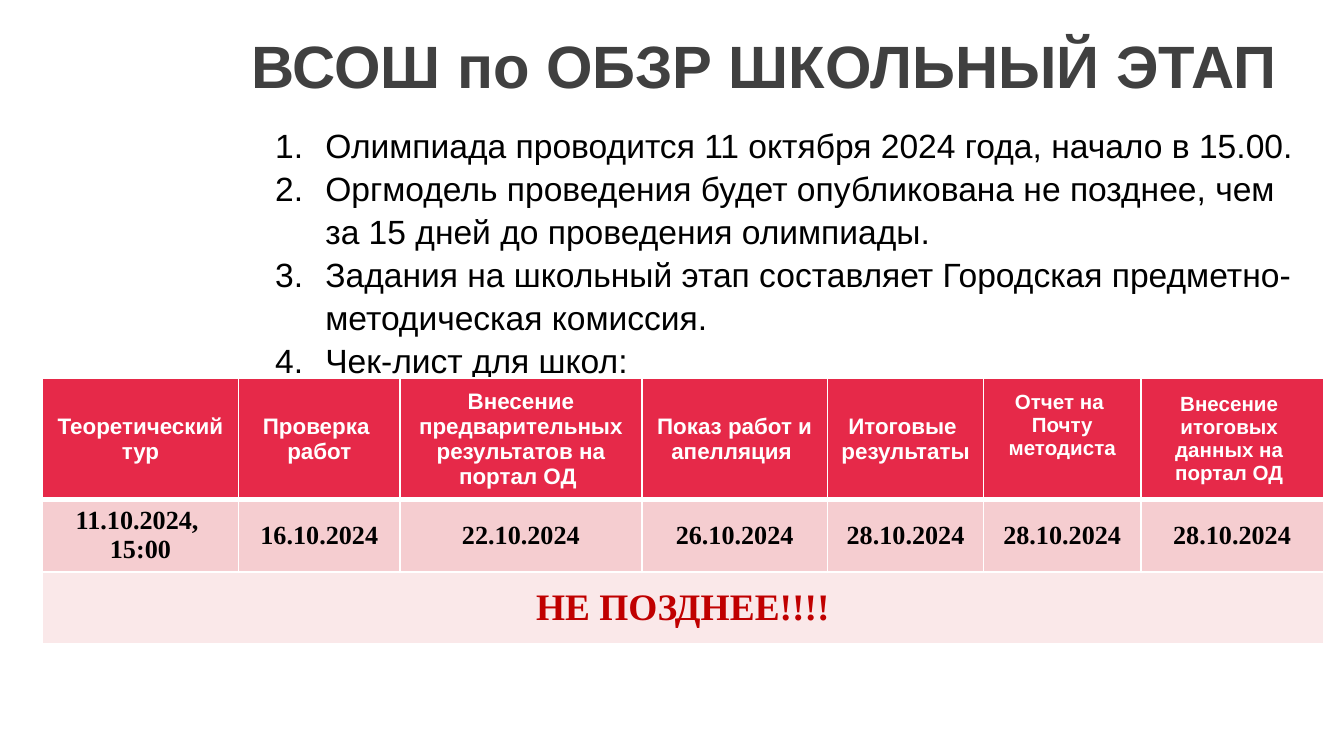
"""Build the slide on the school stage of the olympiad: title, rules, checklist table."""
from lxml.etree import SubElement
from pptx import Presentation
from pptx.dml.color import RGBColor
from pptx.enum.text import MSO_ANCHOR, MSO_AUTO_SIZE, PP_ALIGN
from pptx.oxml.ns import qn
from pptx.util import Cm, Pt

TITLE = "ВСОШ по ОБЗР ШКОЛЬНЫЙ ЭТАП"
RULES = [
    "Олимпиада проводится 11 октября 2024 года, начало в 15.00.",
    "Оргмодель проведения будет опубликована не позднее, чем за 15 дней до проведения олимпиады.",
    "Задания на школьный этап составляет Городская предметно-методическая комиссия.",
    "Чек-лист для школ:",
]
STEPS = [
    (3.71, 12, ["Теоретический ", "тур"], ["11.10.2024, ", "15:00"]),
    (3.05, 12, ["Проверка ", "работ"], ["16.10.2024"]),
    (4.57, 12, ["Внесение предварительных результатов на портал ОД "], ["22.10.2024"]),
    (3.51, 12, ["Показ работ и апелляция "], ["26.10.2024"]),
    (2.95, 12, ["Итоговые ", "результаты"], ["28.10.2024"]),
    (2.97, 11, ["Отчет на ", "Почту", "методиста"], ["28.10.2024"]),
    (3.45, 11, ["Внесение ", "итоговых ", "данных на ", "портал ОД "], ["28.10.2024"]),
]
REPORT = 5
NOTE = ["НЕ ПОЗДНЕЕ!!!!"]
ROWS = [2.25, 1.37, 1.37]

SANS, SERIF = "Arial", "Times New Roman"
WHITE = RGBColor(0xFF, 0xFF, 0xFF)
BLACK = RGBColor(0, 0, 0)
GREY = RGBColor(0x40, 0x40, 0x40)
RED = RGBColor(0xE6, 0x29, 0x49)
ROSE = RGBColor(0xF5, 0xCD, 0xD0)
PALE = RGBColor(0xFA, 0xE8, 0xE9)
DARK = RGBColor(0xC0, 0, 0)


def write(frame, lines, size, face, color, bold=True, align=PP_ALIGN.CENTER):
    for i, line in enumerate(lines):
        para = frame.paragraphs[0] if i == 0 else frame.add_paragraph()
        para.alignment = align
        run = para.add_run()
        run.text = line
        font = run.font
        font.size, font.name, font.bold = Pt(size), face, bold
        font.color.rgb = color


def edge(cell, base):
    props = cell._tc.get_or_add_tcPr()
    for side, width in zip("LRTB", (1, 1, 1, base)):
        line = SubElement(props, qn(f"a:ln{side}"), w=str(Pt(width)))
        fill = SubElement(line, qn("a:solidFill"))
        SubElement(fill, qn("a:srgbClr"), val=str(WHITE))


def paint(cell, fill, lines, size, face, color, base=1):
    edge(cell, base)
    cell.fill.solid()
    cell.fill.fore_color.rgb = fill
    cell.vertical_anchor = MSO_ANCHOR.MIDDLE
    if face == SERIF:
        cell.margin_left = cell.margin_right = Cm(0.18)
        cell.margin_top = cell.margin_bottom = 0
    write(cell.text_frame, lines, size, face, color)


def add_title(slide):
    title = slide.shapes.title
    title.left, title.top, title.width, title.height = Cm(4.5), 0, Cm(20.9), Cm(2.46)
    frame = title.text_frame
    frame.vertical_anchor = MSO_ANCHOR.MIDDLE
    frame.auto_size = MSO_AUTO_SIZE.NONE
    write(frame, [TITLE], 32, SANS, GREY, align=PP_ALIGN.LEFT)


def add_rules(slide):
    frame = slide.shapes.add_textbox(Cm(4.95), Cm(2.18), Cm(19.84), Cm(4.88)).text_frame
    frame.word_wrap = True
    write(frame, RULES, 18, SANS, BLACK, False, PP_ALIGN.LEFT)
    for para in frame.paragraphs:
        para.line_spacing = 1.07
        props = para._p.get_or_add_pPr()
        props.set("marL", str(Cm(0.95)))
        props.set("indent", str(-Cm(0.95)))
        SubElement(props, qn("a:buFont"), typeface=SANS)
        SubElement(props, qn("a:buAutoNum"), type="arabicPeriod")


def add_steps(slide):
    wide = sum(step[0] for step in STEPS)
    table = slide.shapes.add_table(
        len(ROWS), len(STEPS), Cm(0.8), Cm(7.15), Cm(wide), Cm(sum(ROWS))).table
    for row, height in zip(table.rows, ROWS):
        row.height = Cm(height)
    for i, (width, size, head, date) in enumerate(STEPS):
        table.columns[i].width = Cm(width)
        paint(table.cell(0, i), RED, head, size, SANS, WHITE, 3)
        paint(table.cell(1, i), ROSE, date, 14, SERIF, BLACK)
    table.cell(0, REPORT).margin_bottom = Cm(0.64)
    note = table.cell(2, 0)
    note.merge(table.cell(2, len(STEPS) - 1))
    paint(note, PALE, NOTE, 20, SERIF, DARK)


def main():
    deck = Presentation()
    deck.slide_width, deck.slide_height = Cm(25.4), Cm(14.29)
    slide = deck.slides.add_slide(deck.slide_layouts[5])
    add_title(slide)
    add_rules(slide)
    add_steps(slide)
    deck.save("out.pptx")


if __name__ == "__main__":
    main()
